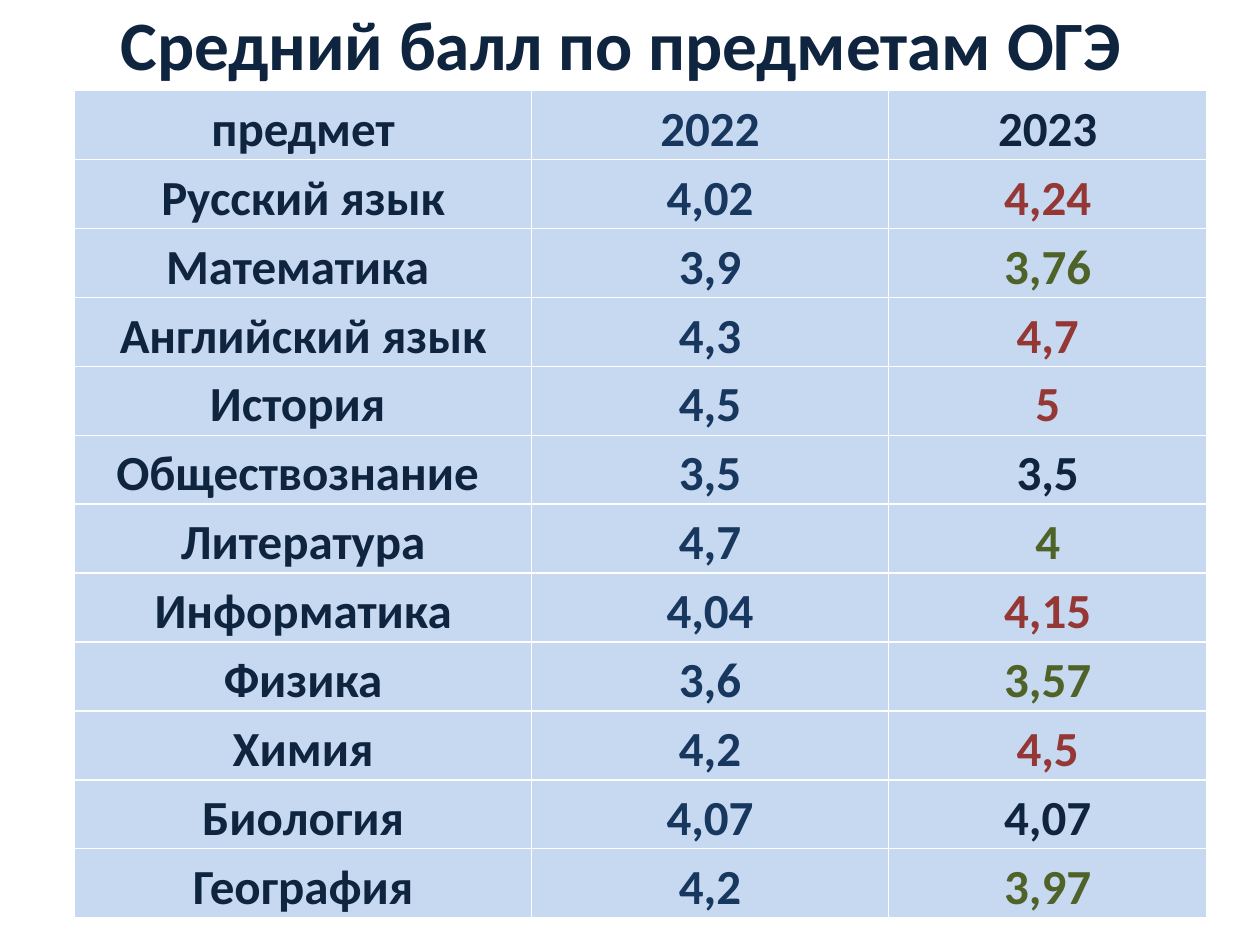
import pptx
import pptx.dml.color
import pptx.enum.text
import pptx.util
from pptx.dml.color import RGBColor
from pptx.util import Inches

NAVY = RGBColor(0x0F, 0x24, 0x3E)
BLUE = RGBColor(0x17, 0x37, 0x5E)
RED = RGBColor(0x95, 0x37, 0x35)
GREEN = RGBColor(0x4F, 0x62, 0x28)
CELL_FILL = RGBColor(0xC6, 0xD9, 0xF1)

TITLE = "Средний балл по предметам ОГЭ"
HEADINGS = ("предмет", "2022", "2023")
SCORES = [
    ("Русский язык", "4,02", "4,24"),
    ("Математика ", "3,9", "3,76"),
    ("Английский язык", "4,3", "4,7"),
    ("История ", "4,5", "5"),
    ("Обществознание ", "3,5", "3,5"),
    ("Литература", "4,7", "4"),
    ("Информатика", "4,04", "4,15"),
    ("Физика", "3,6", "3,57"),
    ("Химия", "4,2", "4,5"),
    ("Биология", "4,07", "4,07"),
    ("География", "4,2", "3,97"),
]
COLUMN_WIDTHS = (3.63, 2.83, 2.53)
ROW_HEIGHT = 0.54


def format_paragraph(paragraph, size, color):
    paragraph.alignment = pptx.enum.text.PP_ALIGN.CENTER
    font = paragraph.font
    font.name = "Calibri"
    font.size = pptx.util.Pt(size)
    font.bold = True
    font.color.rgb = color


def add_title(slide):
    title = slide.shapes.title
    title.left, title.top = Inches(0.43), Inches(0)
    title.width, title.height = Inches(9), Inches(0.68)
    frame = title.text_frame
    frame.text = TITLE
    frame.word_wrap = True
    frame.vertical_anchor = pptx.enum.text.MSO_ANCHOR.MIDDLE
    format_paragraph(frame.paragraphs[0], 39.6, NAVY)


def trend_color(before, after):
    """Red marks a rise in the score, green a fall, navy no change."""
    old, new = (float(score.replace(",", ".")) for score in (before, after))
    if new == old:
        return NAVY
    return RED if new > old else GREEN


def fill_cell(cell, text, color):
    cell.margin_left = cell.margin_right = Inches(0.07)
    cell.margin_top = cell.margin_bottom = 0
    cell.fill.solid()
    cell.fill.fore_color.rgb = CELL_FILL
    cell.text = text
    paragraph = cell.text_frame.paragraphs[0]
    paragraph.line_spacing = 1.15
    format_paragraph(paragraph, 28, color)


def add_score_table(slide):
    rows = [HEADINGS, *SCORES]
    table = slide.shapes.add_table(
        len(rows), len(HEADINGS), Inches(0.59), Inches(0.72),
        Inches(sum(COLUMN_WIDTHS)), Inches(ROW_HEIGHT * len(rows)),
    ).table
    for column, width in zip(table.columns, COLUMN_WIDTHS):
        column.width = Inches(width)
    for index, (table_row, texts) in enumerate(zip(table.rows, rows)):
        table_row.height = Inches(ROW_HEIGHT)
        last_color = NAVY if index == 0 else trend_color(*texts[1:])
        for cell, text, color in zip(table_row.cells, texts, (NAVY, BLUE, last_color)):
            fill_cell(cell, text, color)


def main():
    presentation = pptx.Presentation()
    presentation.slide_width = Inches(10)
    presentation.slide_height = Inches(7.5)
    title_only = presentation.slide_layouts[5]
    slide = presentation.slides.add_slide(title_only)
    add_title(slide)
    add_score_table(slide)
    presentation.save("out.pptx")


if __name__ == "__main__":
    main()
